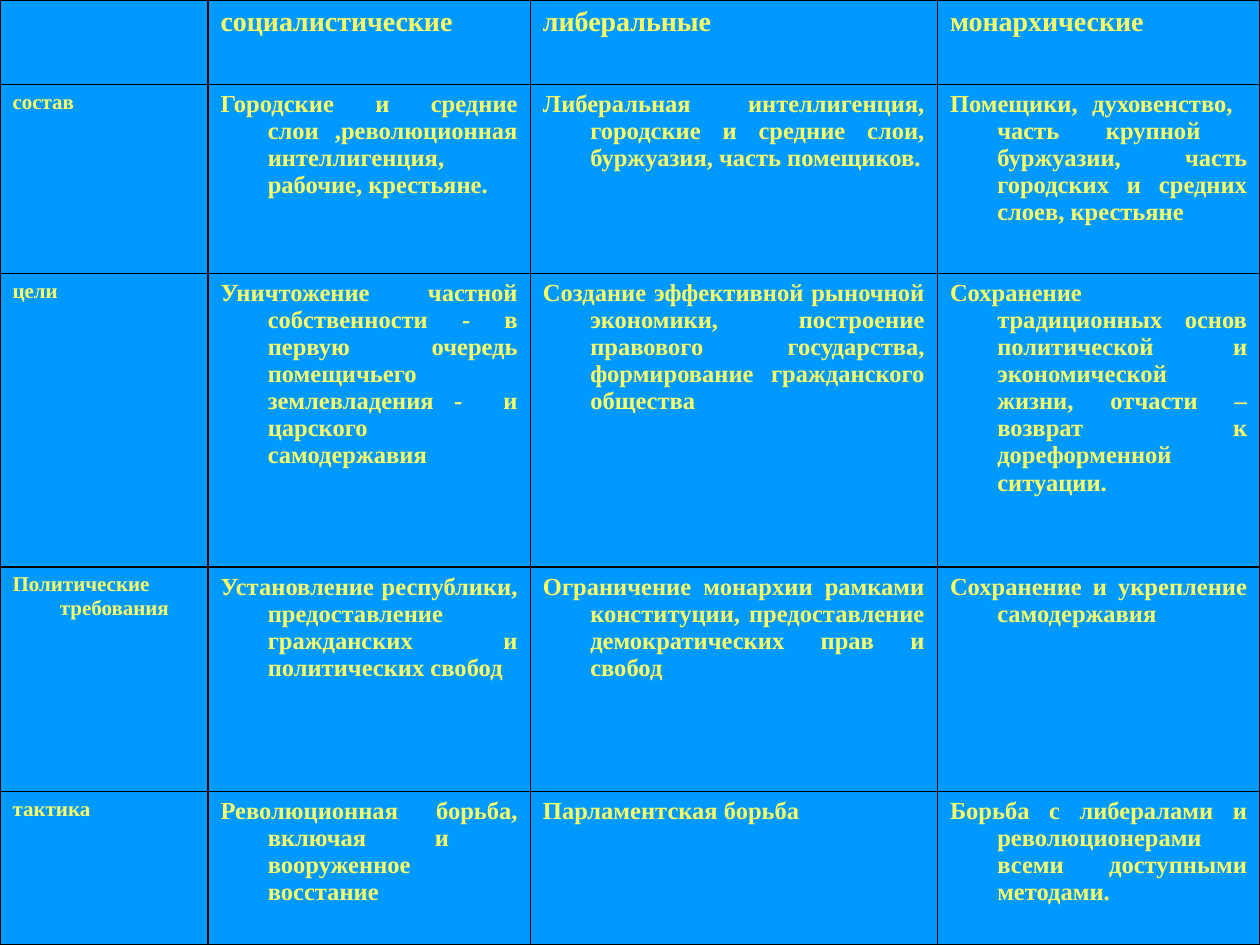
from dataclasses import dataclass

from lxml import etree
from pptx import Presentation
from pptx.dml.color import RGBColor
from pptx.enum.text import PP_ALIGN
from pptx.oxml.ns import qn
from pptx.table import Table, _Cell
from pptx.util import Pt

JUSTIFY = PP_ALIGN.JUSTIFY
BLUE = RGBColor(0x00, 0x99, 0xFF)
YELLOW = RGBColor(0xFF, 0xFF, 0x66)
BLACK = RGBColor(0x00, 0x00, 0x00)

SLIDE_WIDTH, SLIDE_HEIGHT = Pt(720), Pt(540)
COLUMN_WIDTHS = (118.8, 184.3, 232.6, 184.3)
HANGING_INDENT = Pt(27)
BORDER_WIDTH = Pt(1)
HEADER_SIZE, LABEL_SIZE, BODY_SIZE = Pt(16), Pt(12), Pt(14)
FONT_FORMAT = {"name": "Times New Roman", "bold": True}


@dataclass(frozen=True)
class ComparisonRow:
    height: float
    label: str
    socialist: str
    liberal: str
    monarchist: str

    def texts(self) -> tuple[str, ...]:
        return self.label, self.socialist, self.liberal, self.monarchist


ROWS = (
    ComparisonRow(48.2, "", "социалистические", "либеральные", "монархические"),
    ComparisonRow(
        108, "состав",
        "Городские и средние слои  ,революционная интеллигенция, рабочие, крестьяне.",
        "Либеральная интеллигенция, городские и средние слои, буржуазия, часть помещиков.",
        "Помещики, духовенство,  часть крупной  буржуазии, часть городских и средних слоев, "
        "крестьяне",
    ),
    ComparisonRow(
        167.8, "цели",
        "Уничтожение частной собственности - в первую очередь помещичьего землевладения -  "
        "и царского самодержавия",
        "Создание эффективной рыночной экономики, построение правового государства, "
        "формирование гражданского общества",
        "Сохранение традиционных основ политической и экономической жизни, отчасти – "
        "возврат к дореформенной ситуации.",
    ),
    ComparisonRow(
        128.2, "Политические  требования",
        "Установление республики, предоставление гражданских и политических свобод",
        "Ограничение монархии рамками конституции, предоставление демократических прав "
        "и свобод",
        "Сохранение и укрепление самодержавия",
    ),
    ComparisonRow(
        87.8, "тактика",
        "Революционная борьба, включая и  вооруженное восстание",
        "Парламентская борьба",
        "Борьба с либералами и революционерами всеми доступными методами.",
    ),
)


def add_borders(cell: _Cell) -> None:
    """Add the four border lines; call before the fill, which must follow them."""
    properties = cell._tc.get_or_add_tcPr()
    for side in ("lnL", "lnR", "lnT", "lnB"):
        line = etree.SubElement(properties, qn(f"a:{side}"), w=str(BORDER_WIDTH))
        fill = etree.SubElement(line, qn("a:solidFill"))
        etree.SubElement(fill, qn("a:srgbClr"), val=str(BLACK))


def write_text(cell: _Cell, text: str, size: Pt) -> None:
    paragraph = cell.text_frame.paragraphs[0]
    paragraph.alignment = JUSTIFY
    properties = paragraph._p.get_or_add_pPr()
    properties.set("marL", str(HANGING_INDENT))
    properties.set("indent", str(-HANGING_INDENT))
    run = paragraph.add_run()
    run.text = text
    for name, value in FONT_FORMAT.items():
        setattr(run.font, name, value)
    run.font.size = size
    run.font.color.rgb = YELLOW


def text_size(row_index: int, column_index: int) -> Pt:
    if row_index == 0:
        return HEADER_SIZE
    return LABEL_SIZE if column_index == 0 else BODY_SIZE


def fill_table(table: Table) -> None:
    table.first_row = table.horz_banding = False
    for column, width in zip(table.columns, COLUMN_WIDTHS):
        column.width = Pt(width)
    for row_index, row in enumerate(ROWS):
        table.rows[row_index].height = Pt(row.height)
        for column_index, text in enumerate(row.texts()):
            cell = table.cell(row_index, column_index)
            add_borders(cell)
            cell.fill.background()
            if text:
                write_text(cell, text, text_size(row_index, column_index))


def main() -> None:
    presentation = Presentation()
    presentation.slide_width = SLIDE_WIDTH
    presentation.slide_height = SLIDE_HEIGHT
    slide = presentation.slides.add_slide(presentation.slide_layouts[6])
    background = slide.background.fill
    background.solid()
    background.fore_color.rgb = BLUE
    frame = slide.shapes.add_table(
        len(ROWS), len(COLUMN_WIDTHS), Pt(0), Pt(0), SLIDE_WIDTH, SLIDE_HEIGHT
    )
    fill_table(frame.table)
    presentation.save("out.pptx")


if __name__ == "__main__":
    main()
